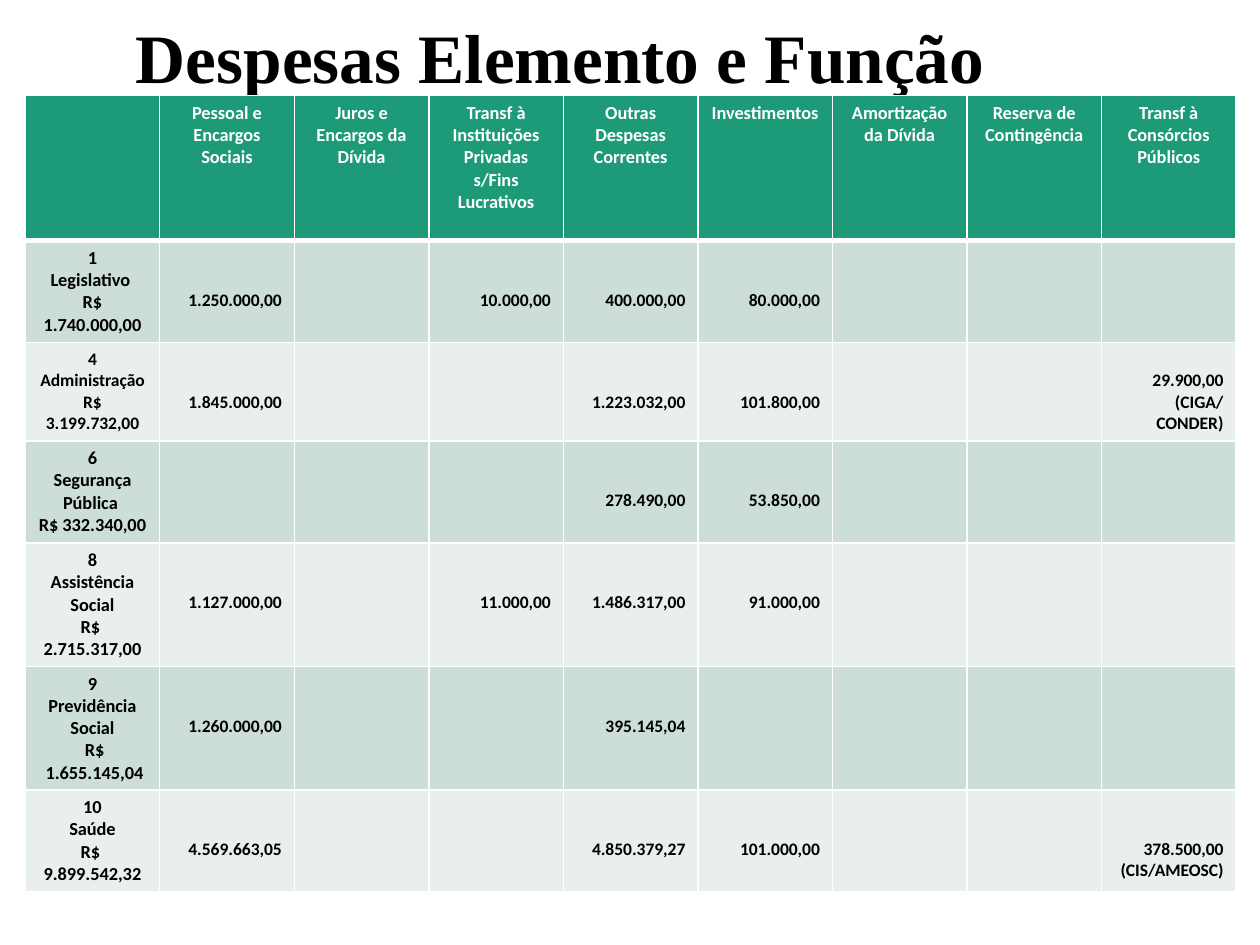
import pptx
import pptx.dml.color
import pptx.enum.text
import pptx.util
from lxml import etree
from pptx.enum.text import MSO_ANCHOR, PP_ALIGN
from pptx.oxml.ns import qn
from pptx.util import Inches, Pt

TITLE = "Despesas Elemento e Função"
HEADERS = [
    "", "Pessoal e Encargos Sociais", "Juros e Encargos da Dívida",
    "Transf à Instituições Privadas s/Fins Lucrativos",
    "Outras Despesas Correntes", "Investimentos", "Amortização da Dívida",
    "Reserva de Contingência", "Transf à Consórcios Públicos",
]
# Row label, label size, row height, {column: amount}
ROWS = [
    ("1\nLegislativo \nR$ 1.740.000,00", 10.5, 0.81,
     {1: "1.250.000,00", 3: "10.000,00", 4: "400.000,00", 5: "80.000,00"}),
    ("4\nAdministração\nR$ 3.199.732,00", 10, 0.78,
     {1: "1.845.000,00", 4: "1.223.032,00", 5: "101.800,00",
      8: "29.900,00\n(CIGA/\nCONDER)"}),
    ("6\nSegurança Pública \nR$ 332.340,00", 10.5, 0.81,
     {4: "278.490,00", 5: "53.850,00"}),
    ("8\nAssistência Social\nR$ \n2.715.317,00", 10.5, 0.98,
     {1: "1.127.000,00", 3: "11.000,00", 4: "1.486.317,00", 5: "91.000,00"}),
    ("9\nPrevidência Social\n R$\n 1.655.145,04", 10.5, 0.98,
     {1: "1.260.000,00", 4: "395.145,04"}),
    ("10\nSaúde\nR$ \n9.899.542,32", 10.5, 0.81,
     {1: "4.569.663,05", 4: "4.850.379,27", 5: "101.000,00",
      8: "378.500,00\n(CIS/AMEOSC)"}),
]
HEADER_HEIGHT = 1.15
HEADER_FILL, BAND_FILLS = "1D9A78", ("CDDED6", "E8EFEC")
BLACK, WHITE = "000000", "FFFFFF"
MARGIN, LINE = 0.05, 0.17


def color(value):
    return pptx.dml.color.RGBColor.from_string(value)


def style(paragraph, font_name, size, text_color, alignment):
    paragraph.alignment = alignment
    font = paragraph.font
    font.name, font.size, font.bold = font_name, Pt(size), True
    font.color.rgb = color(text_color)


def add_borders(cell, top, bottom):
    """Draw white cell borders; top and bottom are widths in points."""
    properties = cell._tc.get_or_add_tcPr()
    for side, width in (("L", 1), ("R", 1), ("T", top), ("B", bottom)):
        line = etree.SubElement(properties, qn(f"a:ln{side}"), w=str(Pt(width)))
        fill = etree.SubElement(line, qn("a:solidFill"))
        etree.SubElement(fill, qn("a:srgbClr"), val=WHITE)


def fill_cell(cell, text, size, text_color, alignment, fill, top=1, bottom=1):
    add_borders(cell, top, bottom)
    cell.fill.solid()
    cell.fill.fore_color.rgb = color(fill)
    cell.text = text
    for paragraph in cell.text_frame.paragraphs:
        style(paragraph, "Calibri", size, text_color, alignment)


def add_title(slide):
    box = slide.shapes.add_textbox(Inches(0.98), Inches(0.21), Inches(8.62), Inches(0.55))
    frame = box.text_frame
    frame.word_wrap = True
    frame.margin_top = frame.margin_bottom = 0
    frame.vertical_anchor = MSO_ANCHOR.MIDDLE
    frame.text = TITLE
    paragraph = frame.paragraphs[0]
    paragraph.line_spacing = 0.9
    style(paragraph, "Times New Roman", 39.6, BLACK, PP_ALIGN.LEFT)


def add_expense_table(slide):
    heights = [HEADER_HEIGHT] + [row[2] for row in ROWS]
    table = slide.shapes.add_table(
        len(heights), len(HEADERS), Inches(0.2), Inches(0.76),
        Inches(9.61), Inches(sum(heights))).table
    for row, height in zip(table.rows, heights):
        row.height = Inches(height)

    for column, header in enumerate(HEADERS):
        fill_cell(table.cell(0, column), header, 10.5, WHITE,
                  PP_ALIGN.CENTER, HEADER_FILL, bottom=3)

    for index, (label, label_size, _, amounts) in enumerate(ROWS):
        fill = BAND_FILLS[index % 2]
        top = 3 if index == 0 else 1
        fill_cell(table.cell(index + 1, 0), label, label_size, BLACK,
                  PP_ALIGN.CENTER, fill, top)
        for column in range(1, len(HEADERS)):
            cell = table.cell(index + 1, column)
            amount = amounts.get(column, "")
            fill_cell(cell, amount, 10, BLACK, PP_ALIGN.RIGHT, fill, top)
            # Amounts start on the third line; three-line ones on the second
            lines_above = 1 if amount.count("\n") == 2 else 2
            cell.margin_top = Inches(MARGIN + lines_above * LINE)


def main():
    presentation = pptx.Presentation()
    presentation.slide_width, presentation.slide_height = Inches(10), Inches(7.5)
    slide = presentation.slides.add_slide(presentation.slide_layouts[6])
    add_title(slide)
    add_expense_table(slide)
    presentation.save("out.pptx")


if __name__ == "__main__":
    main()
